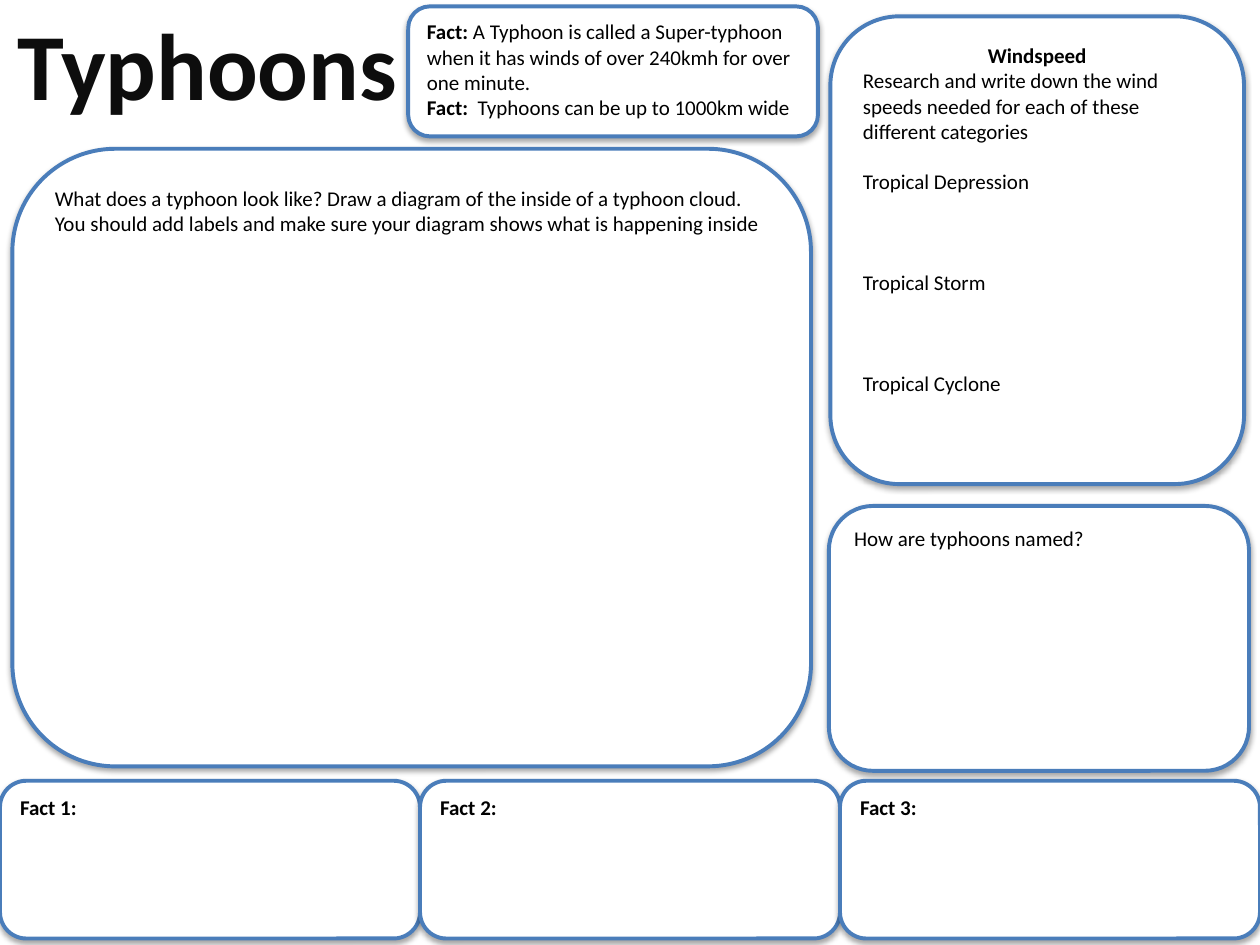
from dataclasses import dataclass

from lxml import etree
from pptx import Presentation
from pptx.dml.color import RGBColor
from pptx.enum.shapes import MSO_SHAPE
from pptx.enum.text import MSO_ANCHOR, MSO_AUTO_SIZE, PP_ALIGN
from pptx.oxml.ns import qn
from pptx.util import Cm, Pt

ROUND = MSO_SHAPE.ROUNDED_RECTANGLE
TOP = MSO_ANCHOR.TOP
LEFT, CENTER = PP_ALIGN.LEFT, PP_ALIGN.CENTER
FIXED = MSO_AUTO_SIZE.NONE
WIDE, HIGH = 25.4, 19.05


@dataclass(frozen=True)
class Theme:
    font: str = "Calibri"
    body: float = 12
    head: float = 54
    row: float = 14.4
    ink: str = "000000"
    dark: str = "0D0D0D"
    paper: str = "FFFFFF"
    edge: str = "4A7DBA"
    rule: float = 2.25


THEME = Theme()


@dataclass(frozen=True)
class Run:
    text: str
    bold: bool = False


@dataclass(frozen=True)
class Para:
    runs: tuple[Run, ...]
    align: PP_ALIGN = LEFT
    gap: int = 0  # empty writing rows above


@dataclass(frozen=True)
class Panel:
    left: float
    top: float
    width: float
    height: float
    paras: tuple[Para, ...]


def plain(text: str, gap: int = 0) -> Para:
    return Para((Run(text),), gap=gap)


def bold(text: str, align: PP_ALIGN = LEFT) -> Para:
    return Para((Run(text, True),), align)


def write(frame, paras: tuple[Para, ...], *, size: float = THEME.body,
          color: str = THEME.ink, wrap: bool = True) -> None:
    frame.word_wrap = wrap
    frame.auto_size = FIXED
    frame.vertical_anchor = TOP
    for num, para in enumerate(paras):
        line = frame.paragraphs[0] if num == 0 else frame.add_paragraph()
        line.alignment = para.align
        if num:
            line.space_before = Pt(para.gap * THEME.row)
        for part in para.runs:
            run = line.add_run()
            run.text = part.text
            font = run.font
            font.name, font.size, font.bold = THEME.font, Pt(size), part.bold
            font.color.rgb = RGBColor.from_string(color)


def shade(shape) -> None:
    """Give the shape a soft shadow straight below it."""
    shape.shadow.inherit = False
    fx = shape._element.spPr.find(qn("a:effectLst"))
    cast = etree.SubElement(fx, qn("a:outerShdw"), blurRad="40000",
                            dist="23000", dir="5400000", rotWithShape="0")
    tint = etree.SubElement(cast, qn("a:srgbClr"), val=THEME.ink)
    etree.SubElement(tint, qn("a:alpha"), val="35000")


def draw(slide, panel: Panel) -> None:
    shape = slide.shapes.add_shape(ROUND, Cm(panel.left), Cm(panel.top),
                                   Cm(panel.width), Cm(panel.height))
    shape.fill.solid()
    shape.fill.fore_color.rgb = RGBColor.from_string(THEME.paper)
    shape.line.color.rgb = RGBColor.from_string(THEME.edge)
    shape.line.width = Pt(THEME.rule)
    shade(shape)
    write(shape.text_frame, panel.paras)


DIAGRAM = Panel(0.25, 3, 16.1, 12.45, (
    plain("What does a typhoon look like? Draw a diagram of the inside of a "
          "typhoon cloud. You should add labels and make sure your diagram "
          "shows what is happening inside"),))
NAMING = Panel(16.71, 10.2, 8.47, 5.34, (plain("How are typhoons named?"),))
WIND = Panel(16.74, 0.33, 8.34, 9.43, (
    bold("Windspeed", CENTER),
    plain("Research and write down the wind speeds needed for each of these "
          "different categories"),
    plain("Tropical Depression", 1),
    plain("Tropical Storm", 3),
    plain("Tropical Cyclone", 3)))
INTRO = Panel(8.23, 0.13, 8.26, 2.62, (
    Para((Run("Fact: ", True),
          Run("A Typhoon is called a Super-typhoon when it has winds of over "
              "240kmh for over one minute."))),
    Para((Run("Fact: ", True),
          Run(" Typhoons can be up to 1000km wide")))))
FACTS = tuple(Panel(num * WIDE / 3, 15.74, WIDE / 3, 3.18,
                    (bold(f"Fact {num + 1}:"),)) for num in range(3))


def main() -> None:
    deck = Presentation()
    deck.slide_width, deck.slide_height = Cm(WIDE), Cm(HIGH)
    slide = deck.slides.add_slide(deck.slide_layouts[5])
    title = slide.shapes.title
    title.left, title.top = Cm(0.03), Cm(0)
    title.width, title.height = Cm(8.3), Cm(2.57)
    write(title.text_frame, (bold("Typhoons", CENTER),),
          size=THEME.head, color=THEME.dark, wrap=False)
    for panel in (DIAGRAM, NAMING, WIND, *FACTS, INTRO):
        draw(slide, panel)
    deck.save("out.pptx")


if __name__ == "__main__":
    main()
